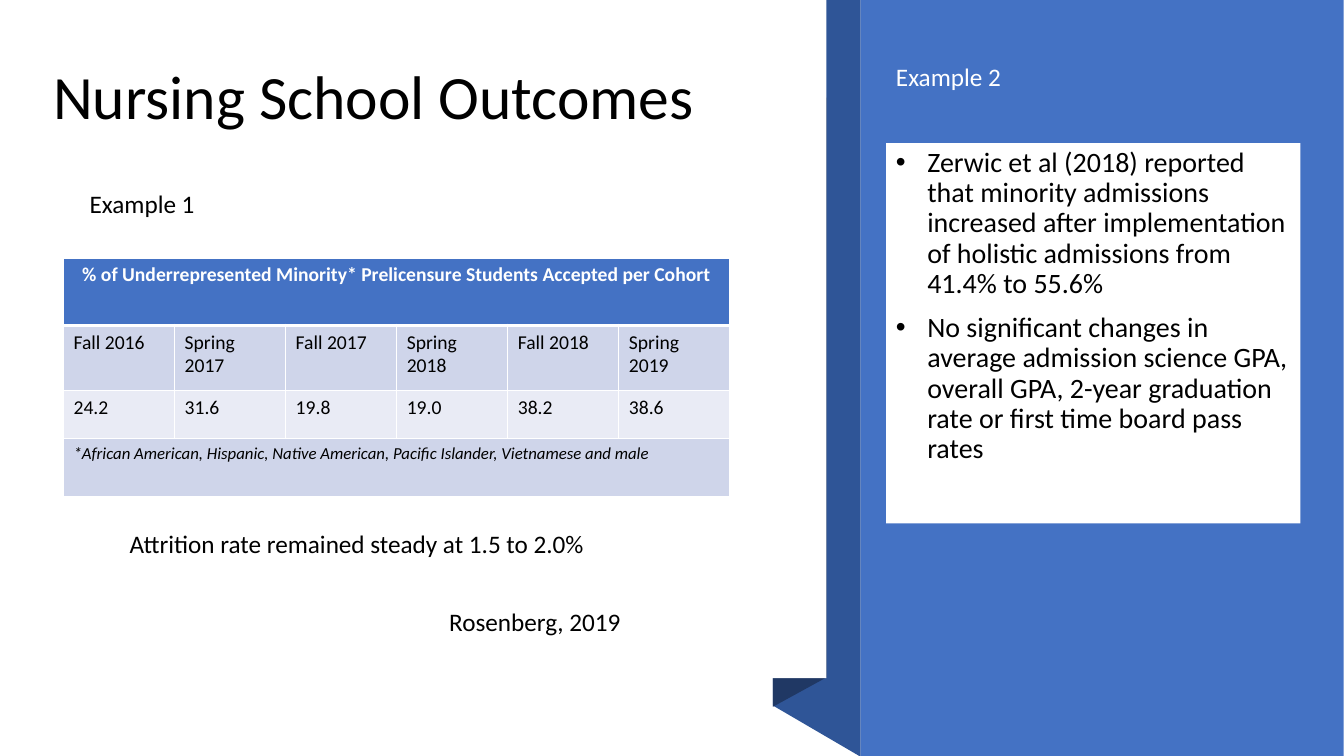
from dataclasses import dataclass
from itertools import product

from lxml.etree import Element, SubElement
from pptx import Presentation
from pptx.dml.color import RGBColor
from pptx.enum.shapes import MSO_SHAPE
from pptx.enum.text import MSO_ANCHOR, MSO_AUTO_SIZE, PP_ALIGN
from pptx.oxml.ns import qn
from pptx.util import Cm, Pt

COLOURS = {
    "white": "FFFFFF",
    "black": "000000",
    "panel": "4472C4",
    "ribbon": "2F5597",
    "fold": "203864",
    "band": "CFD5EA",
    "light_band": "E9EBF5",
}
FONT = "Calibri"


@dataclass
class Ribbon:
    points: list[tuple[float, float]]
    colour: str


@dataclass
class Block:
    left: float
    top: float
    width: float
    height: float
    colour: str


@dataclass
class Label:
    text: str
    left: float
    top: float
    width: float
    height: float = 1.03
    size: int = 18
    colour: str = "black"
    wrap: bool = True
    anchor: MSO_ANCHOR = MSO_ANCHOR.TOP
    fit: MSO_AUTO_SIZE = MSO_AUTO_SIZE.SHAPE_TO_FIT_TEXT
    paragraph: dict | None = None


@dataclass
class TableRow:
    texts: list[str]
    height: float
    fill: str
    size: int = 14
    colour: str = "black"
    bold: bool = False
    italic: bool = False
    align: PP_ALIGN = PP_ALIGN.LEFT
    rule_below: int = 1


RIBBONS = [
    Ribbon([(19.5, 0), (21.69, 0), (21.69, 19.07), (19.48, 17.78), (19.48, 3.2), (19.5, 3.2)], "ribbon"),
    Ribbon([(20.83, 17.07), (19.48, 17.81), (19.48, 3.18), (20.83, 2.46)], "fold"),
]
BLOCKS = [
    Block(0, 0, 20.83, 17.09, "white"),
    Block(21.69, 0, 12.17, 19.05, "panel"),
]
FINDINGS_BLOCK = Block(22.33, 3.61, 10.44, 9.58, "white")
FINDINGS = [
    "Zerwic et al (2018) reported that minority admissions increased after implementation of holistic admissions from 41.4% to 55.6%",
    "No significant changes in average admission science GPA, overall GPA, 2-year graduation rate or first time board pass rates",
]
LABELS = [
    Label("Nursing School Outcomes", 1.09, 1.19, 16.79, 2.29, size=44, anchor=MSO_ANCHOR.BOTTOM,
          fit=MSO_AUTO_SIZE.NONE, paragraph={"line_spacing": 0.9}),
    Label("Rosenberg, 2019", 11.07, 15.16, 4.88, wrap=False, paragraph={"space_after": Pt(6)}),
    Label("Attrition rate remained steady at 1.5 to 2.0%", 3.02, 13.18, 13.89, paragraph={"space_after": Pt(6)}),
    Label("Example 1", 2.01, 4.62, 4.8),
    Label("Example 2", 22.33, 1.42, 4.93, colour="white"),
]
COLUMN_COUNT = 6
COLUMN_WIDTH = 2.8
TABLE_ROWS = [
    TableRow(["% of Underrepresented Minority* Prelicensure Students Accepted per Cohort"],
             1.7, "panel", colour="white", bold=True, align=PP_ALIGN.CENTER, rule_below=3),
    TableRow(["Fall 2016", "Spring 2017", "Fall 2017", "Spring 2018", "Fall 2018", "Spring 2019"], 1.65, "band"),
    TableRow(["24.2", "31.6", "19.8", "19.0", "38.2", "38.6"], 1.2, "light_band"),
    TableRow(["*African American, Hispanic, Native American, Pacific Islander, Vietnamese and male"],
             1.47, "band", size=12, italic=True),
]


def rgb(colour: str) -> RGBColor:
    return RGBColor.from_string(COLOURS[colour])


def apply_format(target, values: dict) -> None:
    for name, value in values.items():
        setattr(target, name, value)


def write(para, text: str, colour: str, **font_format) -> None:
    span = para.add_run()
    span.text = text
    apply_format(span.font, {"name": FONT, **font_format})
    span.font.color.rgb = rgb(colour)


def paint(shape, colour: str) -> None:
    shape.shadow.inherit = False
    shape.fill.solid()
    shape.fill.fore_color.rgb = rgb(colour)
    shape.line.fill.background()


def draw_ribbon(page, ribbon: Ribbon) -> None:
    start, *others = [(Cm(x), Cm(y)) for x, y in ribbon.points]
    builder = page.shapes.build_freeform(*start)
    builder.add_line_segments(others, close=True)
    paint(builder.convert_to_shape(), ribbon.colour)


def draw_block(page, block: Block):
    lengths = map(Cm, (block.left, block.top, block.width, block.height))
    shape = page.shapes.add_shape(MSO_SHAPE.RECTANGLE, *lengths)
    paint(shape, block.colour)
    return shape


def draw_findings(page) -> None:
    frame = draw_block(page, FINDINGS_BLOCK).text_frame
    apply_format(frame, {"word_wrap": True, "vertical_anchor": MSO_ANCHOR.TOP})
    for index, finding in enumerate(FINDINGS):
        para = frame.add_paragraph() if index else frame.paragraphs[0]
        apply_format(para, {"alignment": PP_ALIGN.LEFT, "line_spacing": 0.9, "space_before": Pt(10)})
        properties = para._p.get_or_add_pPr()
        properties.set("marL", str(Cm(0.79)))
        properties.set("indent", str(-Cm(0.79)))
        SubElement(properties, qn("a:buFont"), typeface="Arial")
        SubElement(properties, qn("a:buChar"), char="•")
        write(para, finding, "black", size=Pt(20))


def draw_label(page, label: Label) -> None:
    lengths = map(Cm, (label.left, label.top, label.width, label.height))
    frame = page.shapes.add_textbox(*lengths).text_frame
    apply_format(frame, {"word_wrap": label.wrap, "vertical_anchor": label.anchor, "auto_size": label.fit})
    para = frame.paragraphs[0]
    apply_format(para, label.paragraph or {})
    write(para, label.text, label.colour, size=Pt(label.size))


def rule_below(cell, points: int) -> None:
    line = Element(qn("a:lnB"), w=str(Pt(points)))
    fill = SubElement(line, qn("a:solidFill"))
    SubElement(fill, qn("a:srgbClr"), val=COLOURS["white"])
    cell._tc.get_or_add_tcPr().insert(0, line)


def draw_table(page) -> None:
    width = COLUMN_COUNT * COLUMN_WIDTH
    height = sum(row.height for row in TABLE_ROWS)
    table = page.shapes.add_table(
        len(TABLE_ROWS), COLUMN_COUNT, Cm(1.6), Cm(6.5), Cm(width), Cm(height)
    ).table
    for column in table.columns:
        column.width = Cm(COLUMN_WIDTH)
    for index, row in enumerate(TABLE_ROWS):
        table.rows[index].height = Cm(row.height)
        if len(row.texts) == 1:
            table.cell(index, 0).merge(table.cell(index, COLUMN_COUNT - 1))
    for (index, row), column in product(enumerate(TABLE_ROWS), range(COLUMN_COUNT)):
        cell = table.cell(index, column)
        cell.fill.solid()
        cell.fill.fore_color.rgb = rgb(row.fill)
        rule_below(cell, row.rule_below)
        if column < len(row.texts):
            para = cell.text_frame.paragraphs[0]
            para.alignment = row.align
            write(para, row.texts[column], row.colour, size=Pt(row.size), bold=row.bold, italic=row.italic)


def main() -> None:
    deck = Presentation()
    apply_format(deck, {"slide_width": Cm(33.87), "slide_height": Cm(19.05)})
    page = deck.slides.add_slide(deck.slide_layouts[6])
    for ribbon in RIBBONS:
        draw_ribbon(page, ribbon)
    for block in BLOCKS:
        draw_block(page, block)
    draw_findings(page)
    draw_table(page)
    for label in LABELS:
        draw_label(page, label)
    deck.save("out.pptx")


if __name__ == "__main__":
    main()
